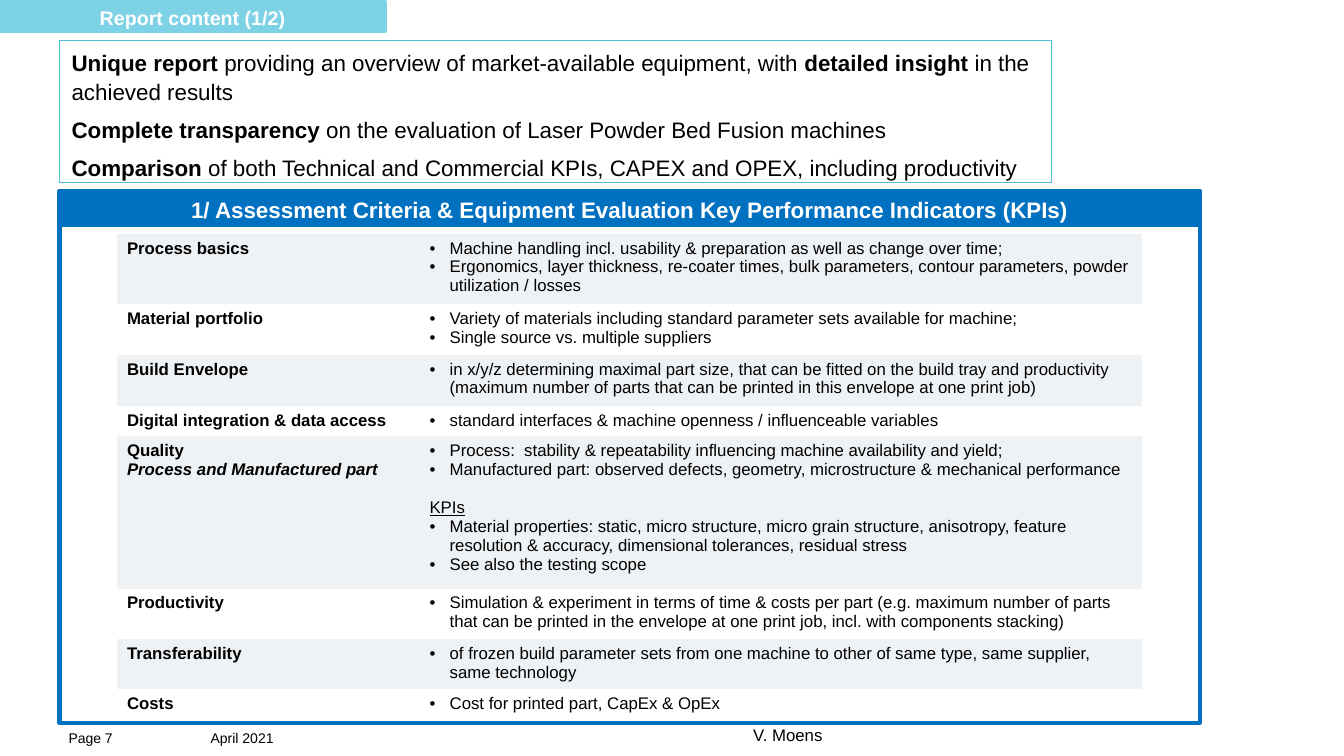
from lxml.etree import SubElement
from pptx import Presentation
from pptx.dml.color import RGBColor
from pptx.enum.shapes import MSO_SHAPE
from pptx.enum.text import MSO_ANCHOR, MSO_AUTO_SIZE, PP_ALIGN
from pptx.oxml.ns import qn
from pptx.util import Inches, Pt

AQUA = RGBColor(0x7D, 0xD2, 0xE6)
TEAL = RGBColor(0x50, 0xBE, 0xD7)
BLUE = RGBColor(0x00, 0x70, 0xC0)
BAND = RGBColor(0xEF, 0xF2, 0xF5)
WHITE = RGBColor(0xFF, 0xFF, 0xFF)
BLACK = RGBColor(0x00, 0x00, 0x00)
NO_GRID = "{2D5ABB26-0587-4C30-8999-92F81FD0307C}"

MESSAGES = [
    [("Unique report ", True),
     ("providing an overview of market-available equipment, with ", False),
     ("detailed insight ", True), ("in the achieved results", False)],
    [("Complete transparency ", True),
     ("on the evaluation of Laser Powder Bed Fusion machines", False)],
    [("Comparison", True),
     (" of both Technical and Commercial KPIs, CAPEX and OPEX, including productivity", False)],
]
SUBHEAD = "KPIs"
CRITERIA = [
    (0.7, ["Process basics"],
     ["Machine handling incl. usability & preparation as well as change over time;",
      "Ergonomics, layer thickness, re-coater times, bulk parameters, contour parameters, "
      "powder utilization / losses"]),
    (0.5, ["Material portfolio"],
     ["Variety of materials including standard parameter sets available for machine;",
      "Single source vs. multiple suppliers"]),
    (0.51, ["Build Envelope"],
     ["in x/y/z determining maximal part size, that can be fitted on the build tray and "
      "productivity (maximum number of parts that can be printed in this envelope at one "
      "print job)"]),
    (0.3, ["Digital integration & data access"],
     ["standard interfaces & machine openness / influenceable variables"]),
    (1.51, ["Quality", "Process and Manufactured part"],
     ["Process:  stability & repeatability influencing machine availability and yield;",
      "Manufactured part: observed defects, geometry, microstructure & mechanical performance",
      SUBHEAD,
      "Material properties: static, micro structure, micro grain structure, anisotropy, "
      "feature resolution & accuracy, dimensional tolerances, residual stress",
      "See also the testing scope"]),
    (0.5, ["Productivity"],
     ["Simulation & experiment in terms of time & costs per part (e.g. maximum number of "
      "parts that can be printed in the envelope at one print job, incl. with components "
      "stacking)"]),
    (0.5, ["Transferability"],
     ["of frozen build parameter sets from one machine to other of same type, same "
      "supplier, same technology"]),
    (0.3, ["Costs"], ["Cost for printed part, CapEx & OpEx"]),
]
FOOTER = [(0.68, 7.22, "Page 7", 10), (2.09, 7.22, "April 2021", 10), (7.47, 7.17, "V. Moens", 12)]


def set_font(paragraph, size, color=BLACK, bold=None):
    font = paragraph.font
    font.name, font.size, font.bold = "Arial", Pt(size), bold
    font.color.rgb = color


def set_margins(frame, side, end):
    frame.margin_left = frame.margin_right = Inches(side)
    frame.margin_top = frame.margin_bottom = Inches(end)


def style_box(shape, fill, line, weight):
    if fill is None:
        shape.fill.background()
    else:
        shape.fill.solid()
        shape.fill.fore_color.rgb = fill
    shape.line.color.rgb = line
    shape.line.width = Pt(weight)


def add_box(slide, left, top, width, height, fill, line, weight):
    box = slide.shapes.add_shape(
        MSO_SHAPE.RECTANGLE, Inches(left), Inches(top), Inches(width), Inches(height))
    box.shadow.inherit = False
    style_box(box, fill, line, weight)
    return box


def write_heading(shape, text, size):
    frame = shape.text_frame
    frame.word_wrap = True
    frame.auto_size = MSO_AUTO_SIZE.NONE
    frame.vertical_anchor = MSO_ANCHOR.MIDDLE
    set_margins(frame, 0.12, 0.04)
    heading = frame.paragraphs[0]
    heading.text = text
    heading.alignment = PP_ALIGN.CENTER
    heading.line_spacing = 1.1
    set_font(heading, size, WHITE, True)


def place_title(slide, left, top, width, height):
    title = slide.shapes.title
    title.left, title.top = Inches(left), Inches(top)
    title.width, title.height = Inches(width), Inches(height)
    style_box(title, AQUA, AQUA, 3)
    write_heading(title, "Report content (1/2)", 14)


def add_messages(slide, left, top, width, height):
    frame = add_box(slide, left, top, width, height, None, TEAL, 0.75).text_frame
    frame.word_wrap = True
    frame.vertical_anchor = MSO_ANCHOR.TOP
    set_margins(frame, 0.12, 0.06)
    for index, parts in enumerate(MESSAGES):
        message = frame.add_paragraph() if index else frame.paragraphs[0]
        message.alignment = PP_ALIGN.LEFT
        message.line_spacing = 1.1
        if index:
            message.space_before = Pt(6)
        set_font(message, 16)
        for text, bold in parts:
            run = message.add_run()
            run.text = text
            run.font.bold = bold


def add_bullet(paragraph, indent):
    properties = paragraph._p.get_or_add_pPr()
    properties.set("marL", str(Inches(indent)))
    properties.set("indent", str(-Inches(indent)))
    SubElement(properties, qn("a:buFont")).set("typeface", "Arial")
    SubElement(properties, qn("a:buChar")).set("char", "•")


def fill_cell(cell, lines, is_label):
    frame = cell.text_frame
    for index, line in enumerate(lines):
        entry = frame.add_paragraph() if index else frame.paragraphs[0]
        entry.text = line
        is_subhead = line == SUBHEAD
        if not is_label and not is_subhead:
            add_bullet(entry, 0.2)
        set_font(entry, 12, bold=is_label)
        if is_label and index:
            entry.font.italic = True
        if is_subhead:
            entry.font.underline = True
            entry.space_before = Pt(13.8)


def add_criteria_table(slide, left, top, width, label_width):
    heights = [height for height, _, _ in CRITERIA]
    holder = slide.shapes.add_table(
        len(CRITERIA), 2, Inches(left), Inches(top), Inches(width), Inches(sum(heights)))
    table = holder.table
    table.first_row = table.horz_banding = False
    for style in holder._element.iter(qn("a:tableStyleId")):
        style.text = NO_GRID
    table.columns[0].width = Inches(label_width)
    table.columns[1].width = Inches(width - label_width)
    for index, (height, labels, details) in enumerate(CRITERIA):
        row = table.rows[index]
        row.height = Inches(height)
        for cell in row.cells:
            if index % 2:
                cell.fill.background()
            else:
                cell.fill.solid()
                cell.fill.fore_color.rgb = BAND
        fill_cell(row.cells[0], labels, True)
        fill_cell(row.cells[1], details, False)


def add_assessment(slide, left, top, width, height):
    add_box(slide, left, top, width, height, None, BLUE, 3)
    header = add_box(slide, left, top, width, 0.33, BLUE, BLUE, 3)
    write_heading(
        header, "1/ Assessment Criteria & Equipment Evaluation Key Performance Indicators (KPIs)", 16)
    add_criteria_table(slide, left + 0.57, top + 0.42, width - 1.14, 3)


def add_footer(slide):
    for left, top, text, size in FOOTER:
        note = slide.shapes.add_textbox(Inches(left), Inches(top), Inches(1), Inches(0.25))
        frame = note.text_frame
        frame.word_wrap = True
        set_margins(frame, 0, 0)
        entry = frame.paragraphs[0]
        entry.text = text
        entry.line_spacing = 1.1
        set_font(entry, size)


def main():
    deck = Presentation()
    deck.slide_width, deck.slide_height = Inches(13.33), Inches(7.5)
    slide = deck.slides.add_slide(deck.slide_layouts[5])
    place_title(slide, 0, 0.02, 3.82, 0.29)
    add_messages(slide, 0.59, 0.4, 9.84, 1.41)
    add_assessment(slide, 0.59, 1.9, 11.31, 5.27)
    add_footer(slide)
    deck.save("out.pptx")


if __name__ == "__main__":
    main()
